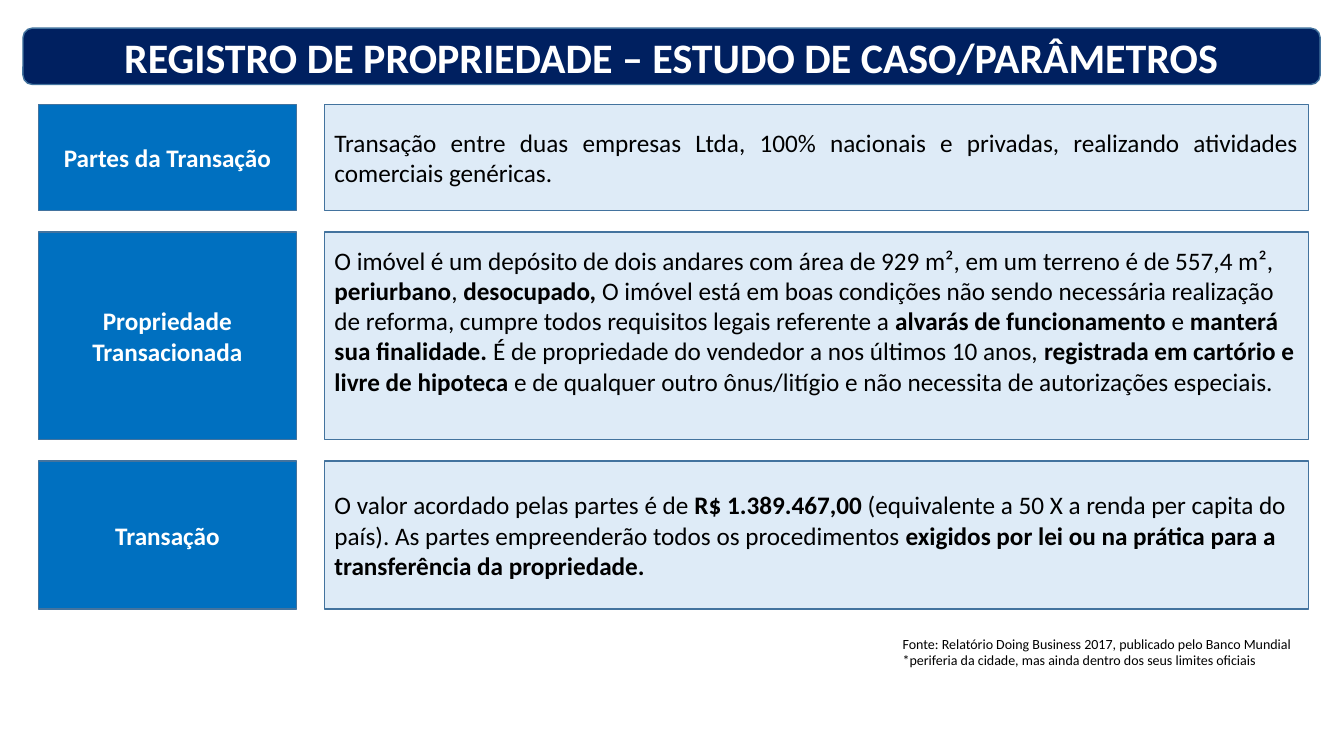
from pptx import Presentation
from pptx.dml.color import RGBColor
from pptx.enum.shapes import MSO_SHAPE
from pptx.enum.text import MSO_ANCHOR, PP_ALIGN
from pptx.util import Cm, Pt

NAVY = RGBColor(0x00, 0x20, 0x60)
BLUE = RGBColor(0x00, 0x70, 0xC0)
PALE_BLUE = RGBColor(0xDE, 0xEB, 0xF7)
OUTLINE = RGBColor(0x43, 0x73, 0x9E)
WHITE = RGBColor(0xFF, 0xFF, 0xFF)
BLACK = RGBColor(0x00, 0x00, 0x00)

TITLE = "REGISTRO DE PROPRIEDADE – ESTUDO DE CASO/PARÂMETROS"
ROW_GAP = 0.54
LABEL_WIDTH = 6.5
COLUMN_GAP = 0.71
BLANK_LINE = 0.77

# Each row: label, height, alignment, extra bottom margin, paragraphs with ** around bold words
ROWS = [
    ("Partes da Transação", 2.67, PP_ALIGN.JUSTIFY, 0, [
        "Transação entre duas empresas Ltda, 100% nacionais e privadas, "
        "realizando atividades comerciais genéricas."]),
    ("Propriedade Transacionada", 5.23, PP_ALIGN.LEFT, BLANK_LINE, [
        "O imóvel é um depósito de dois andares com área de 929 m², "
        "em um terreno é de 557,4 m²,",
        "**periurbano**, **desocupado, **O imóvel está em boas condições não sendo "
        "necessária realização de reforma, cumpre todos requisitos legais referente a "
        "**alvarás de funcionamento** e **manterá sua finalidade.** É de propriedade "
        "do vendedor a nos últimos 10 anos, **registrada em cartório e livre de "
        "hipoteca **e de qualquer outro ônus/litígio e não necessita de "
        "autorizações especiais."]),
    ("Transação", 3.73, PP_ALIGN.LEFT, 0, [
        "O valor acordado pelas partes é de **R$ 1.389.467,00** (equivalente a 50 X a "
        "renda per capita do país). As partes empreenderão todos os procedimentos "
        "**exigidos por lei ou na prática para a transferência da propriedade.**"]),
]
SOURCE_NOTES = [
    "Fonte: Relatório\u00a0Doing Business 2017, publicado pelo Banco Mundial".replace("\u00a0", " "),
    "*periferia da cidade, mas ainda dentro dos seus limites oficiais",
]


def write_text(frame, paragraphs, size, color, align=PP_ALIGN.LEFT, bold=False):
    frame.word_wrap = True
    for index, text in enumerate(paragraphs):
        para = frame.add_paragraph() if index else frame.paragraphs[0]
        para.alignment = align
        para.font.name = "Calibri"
        para.font.size = Pt(size)
        para.font.color.rgb = color
        para.font.bold = bold
        for position, part in enumerate(text.split("**")):
            if part:
                span = para.add_run()
                span.text = part
                if position % 2:
                    span.font.bold = True


def add_panel(page, kind, left, top, width, height, fill):
    panel = page.shapes.add_shape(kind, Cm(left), Cm(top), Cm(width), Cm(height))
    panel.shadow.inherit = False
    panel.fill.solid()
    panel.fill.fore_color.rgb = fill
    panel.line.color.rgb = OUTLINE
    panel.line.width = Pt(1)
    panel.text_frame.vertical_anchor = MSO_ANCHOR.MIDDLE
    return panel


def add_title(page, left, top, width, height):
    banner = add_panel(page, MSO_SHAPE.ROUNDED_RECTANGLE, left, top, width, height, NAVY)
    write_text(banner.text_frame, [TITLE], 30, WHITE, PP_ALIGN.CENTER, True)


def add_rows(page, left, top, width):
    body_left = left + LABEL_WIDTH + COLUMN_GAP
    body_width = width - LABEL_WIDTH - COLUMN_GAP
    for label, height, align, extra_margin, paragraphs in ROWS:
        heading = add_panel(page, MSO_SHAPE.RECTANGLE, left, top, LABEL_WIDTH, height, BLUE)
        write_text(heading.text_frame, [label], 18, WHITE, PP_ALIGN.CENTER, True)
        body = add_panel(page, MSO_SHAPE.RECTANGLE, body_left, top, body_width, height, PALE_BLUE)
        body.text_frame.margin_bottom = Cm(0.13 + extra_margin)
        write_text(body.text_frame, paragraphs, 18, BLACK, align)
        top += height + ROW_GAP


def add_source(page, left, top, width, height):
    box = page.shapes.add_textbox(Cm(left), Cm(top), Cm(width), Cm(height))
    write_text(box.text_frame, SOURCE_NOTES, 10, BLACK)


def main():
    deck = Presentation()
    deck.slide_width = Cm(33.87)
    deck.slide_height = Cm(19.05)
    page = deck.slides.add_slide(deck.slide_layouts[6])
    add_title(page, 0.58, 0.71, 32.69, 1.42)
    add_rows(page, 0.97, 2.64, 32)
    add_source(page, 22.5, 15.88, 11, 1.12)
    deck.save("out.pptx")


if __name__ == "__main__":
    main()
